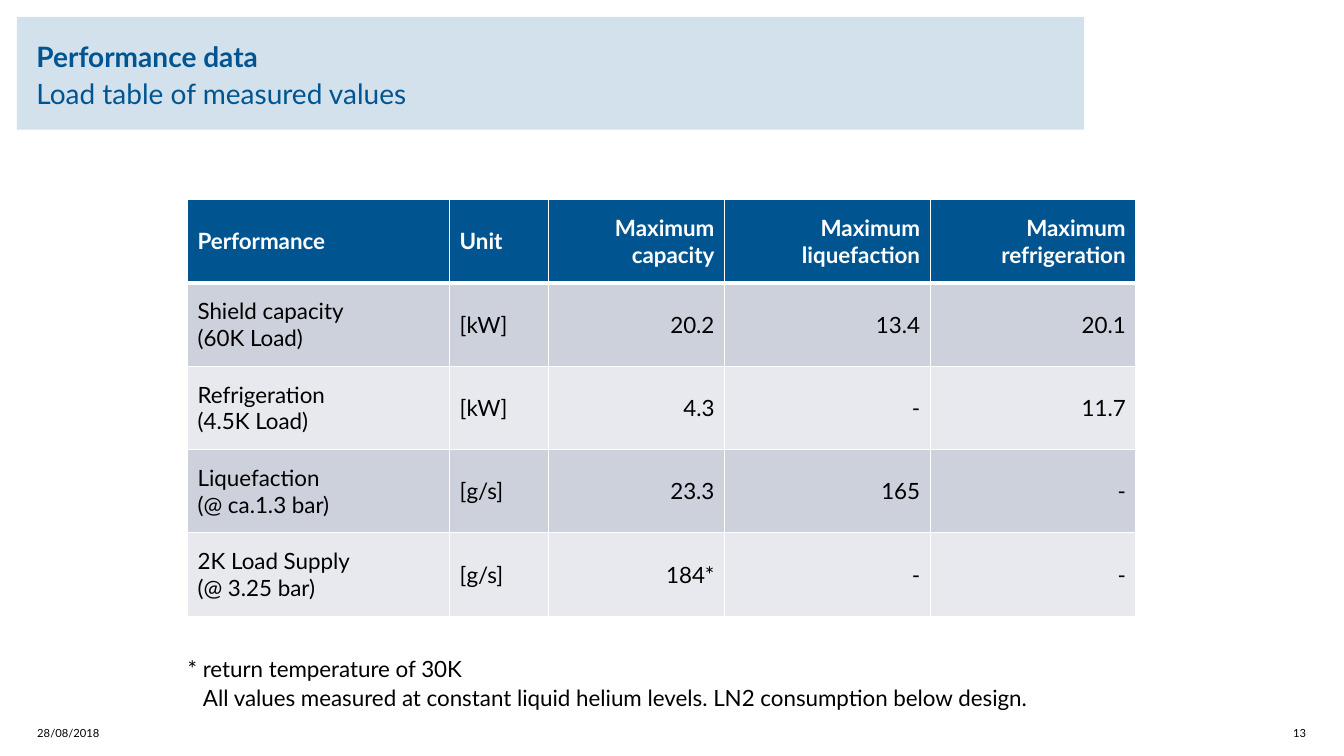
from pptx import Presentation
from pptx.dml.color import RGBColor
from pptx.enum import text
from pptx.oxml import parse_xml
from pptx.oxml.ns import nsdecls
from pptx.util import Pt

NAVY = RGBColor(0x00, 0x55, 0x91)
PALE_BLUE = RGBColor(0xD2, 0xE1, 0xEB)
BAND_DARK = RGBColor(0xCC, 0xD1, 0xDC)
BAND_LIGHT = RGBColor(0xE7, 0xE9, 0xEE)
WHITE = RGBColor(0xFF, 0xFF, 0xFF)
BLACK = RGBColor(0x00, 0x00, 0x00)
FONT = "Lato"
LEFT, RIGHT = text.PP_ALIGN.LEFT, text.PP_ALIGN.RIGHT

COLUMN_WIDTHS = [187.2, 70.8, 125.6, 146.9, 146.9]
ROW_HEIGHT = 59.5
LOAD_TABLE = [
    ["Performance", "Unit", "Maximum capacity", "Maximum liquefaction",
     "Maximum refrigeration"],
    ["Shield capacity\n(60K Load)", "[kW]", "20.2", "13.4", "20.1"],
    ["Refrigeration\n(4.5K Load)", "[kW]", "4.3", "-", "11.7"],
    ["Liquefaction\n(@ ca.1.3 bar)", "[g/s]", "23.3", "165", "-"],
    ["2K Load Supply\n(@ 3.25 bar)", "[g/s]", "184*", "-", "-"],
]


def style_paragraph(paragraph, size, color, bold=False, align=LEFT, spacing=None):
    paragraph.alignment = align
    paragraph.line_spacing = spacing
    font = paragraph.font
    font.name, font.size, font.bold = FONT, Pt(size), bold
    font.color.rgb = color


def set_frame(frame, anchor, side=0, wrap=True):
    frame.word_wrap = wrap
    frame.vertical_anchor = anchor
    frame.margin_left = frame.margin_right = Pt(side)
    frame.margin_top = frame.margin_bottom = 0


def fill_title(title):
    title.left, title.top, title.width, title.height = Pt(12), Pt(12), Pt(762.5), Pt(80.6)
    title.fill.solid()
    title.fill.fore_color.rgb = PALE_BLUE
    frame = title.text_frame
    set_frame(frame, text.MSO_ANCHOR.MIDDLE, side=14)
    frame.auto_size = text.MSO_AUTO_SIZE.NONE
    heading = frame.paragraphs[0]
    style_paragraph(heading, 20, NAVY, spacing=1.1)
    topic = heading.add_run()
    topic.text = "Performance data"
    topic.font.bold = True
    heading.add_line_break()
    heading.add_run().text = "Load table of measured values"


def add_text(slide, box, lines, size, anchor, align=LEFT, spacing=None, wrap=True):
    frame = slide.shapes.add_textbox(*map(Pt, box)).text_frame
    set_frame(frame, anchor, wrap=wrap)
    frame.text = "\n".join(lines)
    for paragraph in frame.paragraphs:
        style_paragraph(paragraph, size, BLACK, align=align, spacing=spacing)
    return frame


def set_borders(cell, top, bottom):
    """Draw white cell borders; top and bottom are widths in points."""
    properties = cell._tc.get_or_add_tcPr()
    for side, width in (("L", 1), ("R", 1), ("T", top), ("B", bottom)):
        properties.append(parse_xml(
            f'<a:ln{side} {nsdecls("a")} w="{Pt(width)}"><a:solidFill>'
            f'<a:srgbClr val="{WHITE}"/></a:solidFill></a:ln{side}>'))


def add_load_table(slide):
    table = slide.shapes.add_table(
        len(LOAD_TABLE), len(COLUMN_WIDTHS), Pt(134), Pt(142.6),
        Pt(sum(COLUMN_WIDTHS)), Pt(ROW_HEIGHT * len(LOAD_TABLE))).table
    for column, width in zip(table.columns, COLUMN_WIDTHS):
        column.width = Pt(width)
    for r, values in enumerate(LOAD_TABLE):
        table.rows[r].height = Pt(ROW_HEIGHT)
        header = r == 0
        background = NAVY if header else BAND_DARK if r % 2 else BAND_LIGHT
        for c, value in enumerate(values):
            cell = table.cell(r, c)
            set_borders(cell, top=3 if r == 1 else 1, bottom=3 if header else 1)
            cell.fill.solid()
            cell.fill.fore_color.rgb = background
            cell.vertical_anchor = text.MSO_ANCHOR.MIDDLE
            cell.text = value
            for paragraph in cell.text_frame.paragraphs:
                style_paragraph(paragraph, 16, WHITE if header else BLACK,
                                bold=header, align=RIGHT if c > 1 else LEFT)


def add_footnote(slide):
    frame = add_text(
        slide, (134, 465.8, 677.5, 42.5),
        ["* return temperature of 30K",
         "All values measured at constant liquid helium levels. "
         "LN2 consumption below design."],
        16, text.MSO_ANCHOR.TOP, spacing=1.1)
    frame.paragraphs[1]._p.get_or_add_pPr().set("marL", str(Pt(11)))


def main():
    deck = Presentation()
    deck.slide_width, deck.slide_height = Pt(960), Pt(540)
    slide = deck.slides.add_slide(deck.slide_layouts[5])
    fill_title(slide.shapes.title)
    add_load_table(slide)
    add_footnote(slide)
    bottom = text.MSO_ANCHOR.BOTTOM
    add_text(slide, (26.6, 508.3, 57, 20.2), ["28/08/2018"], 8, bottom)
    add_text(slide, (899.3, 508.3, 33.8, 20.2), ["13"], 8, bottom, align=RIGHT, wrap=False)
    deck.save("out.pptx")


if __name__ == "__main__":
    main()
